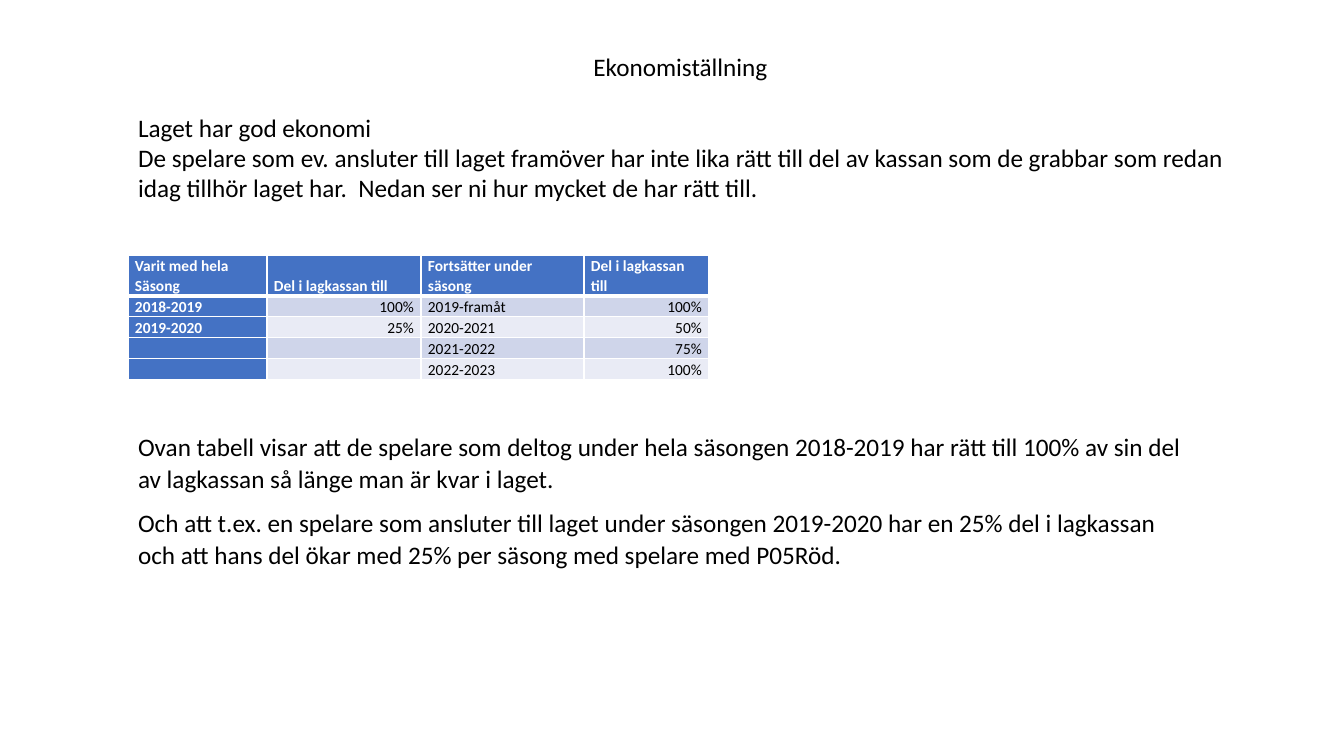
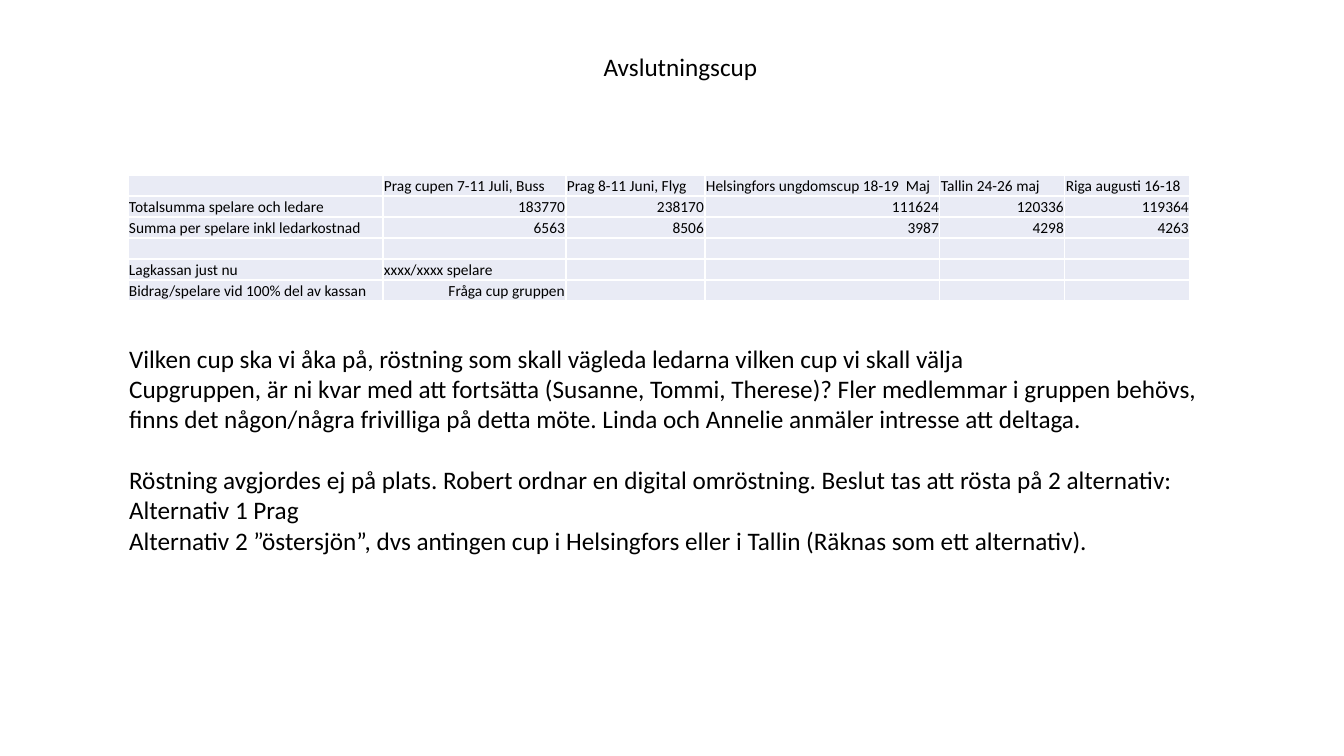
"""Builds two slides on the team's finances and its closing cup."""
from lxml.etree import SubElement
from pptx import Presentation
from pptx.dml.color import RGBColor
from pptx.enum.text import MSO_ANCHOR as Anchor, MSO_AUTO_SIZE as AutoSize, PP_ALIGN as Align
from pptx.oxml.ns import qn
from pptx.util import Emu, Pt

EMU_PER_PX = 914400 / 100.8
BLACK, WHITE, BLUE = "000000", "FFFFFF", "4472C4"
BANDS = ("CFD5EA", "E9EBF5")
FONT = "Calibri"
TITLE_BOX = (128, 46, 1105, 40)
TITLE_STYLE = {"alignment": Align.CENTER}
PLAIN = {"alignment": Align.LEFT, "line_spacing": 1.0, "space_before": Pt(0), "space_after": Pt(0)}
AIRY = PLAIN | {"line_spacing": 1.07, "space_after": Pt(8)}
NEW_TOPIC = PLAIN | {"space_before": Pt(22)}
BODY_FONT = {"name": FONT, "size": Pt(18), "bold": False}
CELL_FONT = {"name": FONT, "size": Pt(11)}
RIGHT_ALIGNED = {"Fråga cup gruppen"}
TWO_BODIES, ONE_BODY = 3, 1

SLIDES = [
    {
        "layout": TWO_BODIES,
        "title": "Ekonomiställning",
        "bodies": [
            ((128, 107, 1110, 102), [
                ("Laget har god ekonomi", PLAIN),
                ("De spelare som ev. ansluter till laget framöver har inte lika rätt till del av kassan "
                 "som de grabbar som redan idag tillhör laget har.  Nedan ser ni hur mycket de har rätt till.",
                 PLAIN),
            ]),
            ((128, 424, 1069, 151), [
                ("Ovan tabell visar att de spelare som deltog under hela säsongen 2018-2019 har rätt till "
                 "100% av sin del av lagkassan så länge man är kvar i laget.", AIRY),
                ("Och att t.ex. en spelare som ansluter till laget under säsongen 2019-2020 har en 25% del "
                 "i lagkassan och att hans del ökar med 25% per säsong med spelare med P05Röd.", AIRY),
            ]),
        ],
        "table": {
            "origin": (128, 255),
            "columns": [139, 154, 163, 125],
            "heights": [39, 21, 21, 21, 21],
            "margins": (7, 0, 7, 0),
            "line_spacing": 1.07,
            "headed": True,
            "rows": [
                ("Varit med hela Säsong", "Del i lagkassan till", "Fortsätter under säsong", "Del i lagkassan till"),
                ("2018-2019", "100%", "2019-framåt", "100%"),
                ("2019-2020", "25%", "2020-2021", "50%"),
                ("", "", "2021-2022", "75%"),
                ("", "", "2022-2023", "100%"),
            ],
        },
    },
    {
        "layout": ONE_BODY,
        "title": "Avslutningscup",
        "bodies": [
            ((119, 338, 1105, 285), [
                ("Vilken cup ska vi åka på, röstning som skall vägleda ledarna vilken cup vi skall välja", PLAIN),
                ("Cupgruppen, är ni kvar med att fortsätta (Susanne, Tommi, Therese)? Fler medlemmar i gruppen "
                 "behövs, finns det någon/några frivilliga på detta möte. Linda och Annelie anmäler intresse "
                 "att deltaga.", PLAIN),
                ("Röstning avgjordes ej på plats. Robert ordnar en digital omröstning. Beslut tas att rösta "
                 "på 2 alternativ:", NEW_TOPIC),
                ("Alternativ 1 Prag", PLAIN),
                ("Alternativ 2 ”östersjön”, dvs antingen cup i Helsingfors eller i Tallin "
                 "(Räknas som ett alternativ).", PLAIN),
            ]),
        ],
        "table": {
            "origin": (128, 175),
            "columns": [255, 183, 139, 235, 125, 125],
            "heights": [21] * 6,
            "margins": (1, 1, 1, 0),
            "line_spacing": 1.0,
            "headed": False,
            "rows": [
                ("", "Prag cupen 7-11 Juli, Buss", "Prag 8-11 Juni, Flyg",
                 "Helsingfors ungdomscup 18-19  Maj", "Tallin 24-26 maj", "Riga augusti 16-18"),
                ("Totalsumma spelare och ledare", "183770", "238170", "111624", "120336", "119364"),
                ("Summa per spelare inkl ledarkostnad", "6563", "8506", "3987", "4298", "4263"),
                ("",) * 6,
                ("Lagkassan just nu", "xxxx/xxxx spelare", "", "", "", ""),
                ("Bidrag/spelare vid 100% del av kassan", "Fråga cup gruppen", "", "", "", ""),
            ],
        },
    },
]


def px(length):
    return Emu(round(length * EMU_PER_PX))


def rgb(color):
    return RGBColor.from_string(color)


def apply(target, values):
    for name, value in values.items():
        setattr(target, name, value)


def write(paragraph, text, layout, font, color):
    apply(paragraph, layout)
    if not text:
        SubElement(paragraph._p, qn("a:endParaRPr"), sz=str(int(font["size"].pt * 100)))
        return
    run = paragraph.add_run()
    run.text = text
    apply(run.font, font)
    run.font.color.rgb = rgb(color)


def fill_placeholder(holder, box, paragraphs):
    apply(holder, dict(zip(("left", "top", "width", "height"), map(px, box))))
    frame = holder.text_frame
    apply(frame, {"word_wrap": True, "auto_size": AutoSize.NONE, "vertical_anchor": Anchor.TOP})
    for index, (text, layout) in enumerate(paragraphs):
        paragraph = frame.add_paragraph() if index else frame.paragraphs[0]
        write(paragraph, text, layout, BODY_FONT, BLACK)
        properties = paragraph._p.get_or_add_pPr()
        properties.set("marL", "0")
        properties.set("indent", "0")
        SubElement(properties, qn("a:buNone"))


def draw_borders(cell, widths):
    properties = cell._tc.get_or_add_tcPr()
    for side, width in widths.items():
        line = SubElement(properties, qn(f"a:ln{side}"), w=str(Pt(width)))
        solid = SubElement(line, qn("a:solidFill"))
        SubElement(solid, qn("a:srgbClr"), val=WHITE)


def add_grid(slide, grid):
    columns, heights, rows = grid["columns"], grid["heights"], grid["rows"]
    bounds = (*grid["origin"], sum(columns), sum(heights))
    table = slide.shapes.add_table(len(rows), len(columns), *map(px, bounds)).table
    apply(table, {"first_row": False, "horz_banding": False})
    for column, width in zip(table.columns, columns):
        column.width = px(width)
    for row, height in zip(table.rows, heights):
        row.height = px(height)
    margins = dict(zip(("margin_left", "margin_top", "margin_right", "margin_bottom"), map(px, grid["margins"])))
    headed = grid["headed"]
    for r, texts in enumerate(rows):
        for c, text in enumerate(texts):
            cell = table.cell(r, c)
            is_heading = headed and 0 in (r, c)
            draw_borders(cell, {"L": 1, "R": 1, "T": 3 if headed and r == 1 else 1,
                                "B": 3 if headed and r == 0 else 1})
            cell.fill.solid()
            band = BANDS[(r + 1) % 2] if headed else BANDS[1]
            cell.fill.fore_color.rgb = rgb(BLUE if is_heading else band)
            apply(cell, margins | {"vertical_anchor": Anchor.BOTTOM})
            to_right = text.rstrip("%").isdigit() or text in RIGHT_ALIGNED
            layout = {"alignment": Align.RIGHT if to_right else Align.LEFT, "line_spacing": grid["line_spacing"]}
            write(cell.text_frame.paragraphs[0], text, layout,
                  CELL_FONT | {"bold": is_heading}, WHITE if is_heading else BLACK)


def main():
    deck = Presentation()
    apply(deck, {"slide_width": px(1344), "slide_height": px(756)})
    for content in SLIDES:
        slide = deck.slides.add_slide(deck.slide_layouts[content["layout"]])
        fill_placeholder(slide.shapes.title, TITLE_BOX, [(content["title"], PLAIN | TITLE_STYLE)])
        for index, (box, paragraphs) in enumerate(content["bodies"], start=1):
            fill_placeholder(slide.placeholders[index], box, paragraphs)
        add_grid(slide, content["table"])
    deck.save("out.pptx")


if __name__ == "__main__":
    main()
